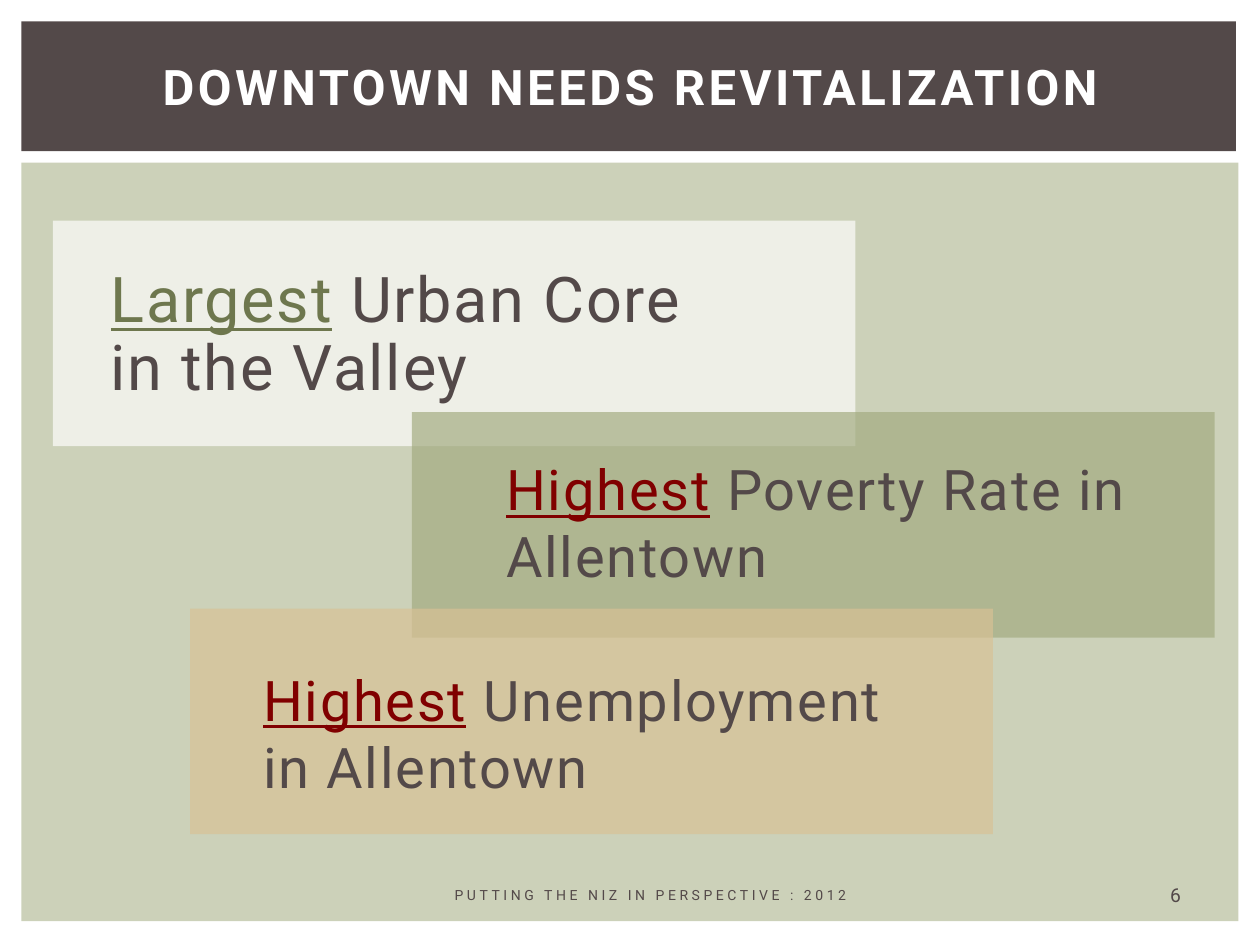
from dataclasses import dataclass

from pptx import Presentation
from pptx import util as u
from pptx.dml.color import RGBColor
from pptx.enum import shapes, text
from pptx.oxml import ns, xmlchemy


@dataclass(frozen=True)
class Theme:
    font: str = "Roboto"
    ink: str = "534949"
    white: str = "FFFFFF"
    sage: str = "CCD1B9"
    olive: str = "A1AA7E"
    sand: str = "D9C194"
    moss: str = "6E774E"
    maroon: str = "800000"
    title: int = 28
    lead: int = 36
    point: int = 32
    footer: int = 8
    number: int = 11


class Deck:
    def __init__(self, theme):
        self.theme = theme
        self.prs = Presentation()
        self.prs.slide_width, self.prs.slide_height = u.Inches(10), u.Inches(7.5)
        self.s = self.prs.slides.add_slide(self.prs.slide_layouts[1])

    def panel(self, box, color, opacity=None):
        """Add a borderless rectangle; opacity is a percentage."""
        sp = self.s.shapes.add_shape(shapes.MSO_SHAPE.RECTANGLE, *map(u.Inches, box))
        sp.shadow.inherit = False
        sp.line.fill.background()
        sp.fill.solid()
        sp.fill.fore_color.rgb = RGBColor.from_string(color)
        if opacity is not None:
            clr = sp._element.spPr.find(".//" + ns.qn("a:srgbClr"))
            alpha = xmlchemy.OxmlElement("a:alpha")
            alpha.set("val", str(opacity * 1000))
            clr.append(alpha)

    def placeholder(self, idx, box):
        """Position a template placeholder and bring it to the front."""
        sp = self.s.placeholders[idx]
        sp.left, sp.top, sp.width, sp.height = map(u.Inches, box)
        self.s.shapes._spTree.append(sp._element)
        return sp

    def textbox(self, box):
        return self.s.shapes.add_textbox(*map(u.Inches, box))

    def set_text(self, sp, runs, size, spacing=0, bold=False, anchor="MIDDLE", **para):
        """Fill sp with (text, color, underline) runs; para holds paragraph formats."""
        tf = sp.text_frame
        frame = dict(word_wrap=True, auto_size=text.MSO_AUTO_SIZE.NONE,
                     vertical_anchor=text.MSO_ANCHOR[anchor])
        for name, value in frame.items():
            setattr(tf, name, value)
        p = tf.paragraphs[0]
        for name, value in para.items():
            setattr(p, name, value)
        for words, color, underline in runs:
            r = p.add_run()
            r.text = words
            fmt = dict(name=self.theme.font, size=u.Pt(size), bold=bold,
                       underline=underline)
            for name, value in fmt.items():
                setattr(r.font, name, value)
            r.font.color.rgb = RGBColor.from_string(color)
            r._r.get_or_add_rPr().set("spc", str(spacing * 100))
        return p

    def label(self, sp, words, color, size, **style):
        self.set_text(sp, [(words, color, False)], size,
                      alignment=text.PP_ALIGN.CENTER, **style)

    def point(self, sp, key, rest, color, size, line_spacing=1.0):
        """Set a statement that opens with an underlined key word."""
        p = self.set_text(sp, [(key, color, True), (rest, self.theme.ink, False)], size,
                          spacing=1, anchor="TOP", alignment=text.PP_ALIGN.LEFT,
                          line_spacing=line_spacing,
                          space_before=u.Pt(0.2 * size), space_after=u.Pt(3))
        pPr = p._p.get_or_add_pPr()
        pPr.set("marL", str(u.Inches(0.05)))
        pPr.set("indent", "0")
        pPr.append(xmlchemy.OxmlElement("a:buNone"))


def main():
    t = Theme()
    d = Deck(t)
    d.panel((0.17, 1.29, 9.66, 6.02), t.sage)
    d.panel((0.17, 0.17, 9.64, 1.03), t.ink)
    for left, top, color in ((0.42, 1.75, t.white), (3.27, 3.27, t.olive),
                             (1.51, 4.83, t.sand)):
        d.panel((left, top, 6.37, 1.79), color, opacity=67)

    d.point(d.placeholder(1, (0.73, 2.08, 5.08, 1.65)), "Largest",
            " Urban Core in the Valley", t.moss, t.lead, line_spacing=0.9)
    d.label(d.textbox((3.33, 6.95, 3.67, 0.3)),
            "PUTTING THE NIZ IN PERSPECTIVE : 2012", t.ink, t.footer, spacing=2)
    d.label(d.textbox((9.01, 6.95, 0.64, 0.3)), "6", t.ink, t.number)
    d.label(d.placeholder(0, (0.42, 0.28, 9.17, 0.8)),
            "DOWNTOWN NEEDS REVITALIZATION", t.white, t.title, spacing=2, bold=True)
    for box, rest in (((3.87, 3.56, 5.28, 1.4), " Poverty Rate in Allentown"),
                      ((1.94, 5.23, 5.39, 1.4), " Unemployment in Allentown")):
        d.point(d.textbox(box), "Highest", rest, t.maroon, t.point)
    d.prs.save("out.pptx")


if __name__ == "__main__":
    main()
